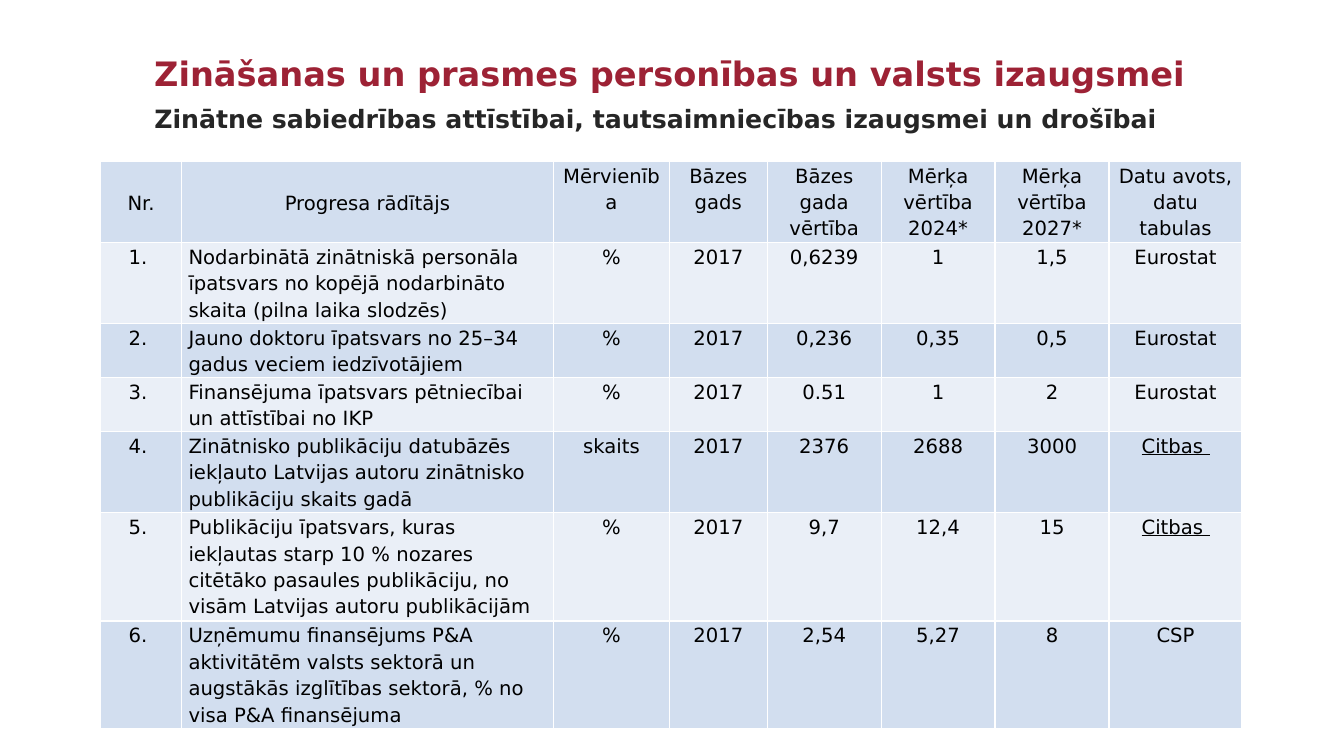
from dataclasses import dataclass

from lxml import etree
from pptx import Presentation
from pptx import util as u
from pptx.dml.color import RGBColor
from pptx.enum import text
from pptx.oxml import ns

HEADINGS = [
    # wording, top, width, height
    ("Zināšanas un prasmes personības un valsts izaugsmei", 0.48, 10.36, 0.5),
    ("Zinātne sabiedrības attīstībai, tautsaimniecības izaugsmei un drošībai", 0.98, 10.12, 0.71),
]
HEADER = ["Nr.", "Progresa rādītājs", "Mērvienība", "Bāzes gads", "Bāzes gada vērtība",
          "Mērķa vērtība 2024*", "Mērķa vērtība 2027*", "Datu avots, datu tabulas"]
CITATION_BASE = "Citbas "
INDICATORS = [
    ("Nodarbinātā zinātniskā personāla īpatsvars no kopējā nodarbināto skaita (pilna laika slodzēs)",
     "%", "2017", "0,6239", "1", "1,5", "Eurostat"),
    ("Jauno doktoru īpatsvars no 25–34 gadus veciem iedzīvotājiem",
     "%", "2017", "0,236", "0,35", "0,5", "Eurostat"),
    ("Finansējuma īpatsvars pētniecībai un attīstībai no IKP",
     "%", "2017", "0.51", "1", "2", "Eurostat"),
    ("Zinātnisko publikāciju datubāzēs iekļauto Latvijas autoru zinātnisko publikāciju skaits gadā",
     "skaits", "2017", "2376", "2688", "3000", CITATION_BASE),
    ("Publikāciju īpatsvars, kuras iekļautas starp 10 % nozares citētāko pasaules publikāciju, "
     "no visām Latvijas autoru publikācijām",
     "%", "2017", "9,7", "12,4", "15", CITATION_BASE),
    ("Uzņēmumu finansējums P&A aktivitātēm valsts sektorā un augstākās izglītības sektorā, "
     "% no visa P&A finansējuma",
     "%", "2017", "2,54", "5,27", "8", "CSP"),
]
COLUMN_WIDTHS = [0.8, 3.69, 1.15, 0.97, 1.13, 1.13, 1.13, 1.32]
ROW_LINES = [3, 3, 2, 2, 3, 4, 3]
LINE_HEIGHT = 0.26
HEADING_LEFT = 1.48
TABLE_LEFT, TABLE_TOP = 1, 1.6


@dataclass(frozen=True)
class Theme:
    font: str = "DejaVu Sans"
    heading_sizes: tuple = (24, 18)
    heading_colors: tuple = ("9D2235", "262626")
    cell_size: int = 14
    cell_color: str = "000000"
    bands: tuple = ("D2DEEF", "EAEFF7")
    border: str = "FFFFFF"


THEME = Theme()


def style(para, size, color, bold=False):
    para.font.name = THEME.font
    para.font.size = u.Pt(size)
    para.font.bold = bold
    para.font.color.rgb = RGBColor.from_string(color)


def add_heading(page, wording, top, width, height, size, color):
    box = page.shapes.add_textbox(*map(u.Inches, (HEADING_LEFT, top, width, height)))
    frame = box.text_frame
    frame.word_wrap = False
    frame.auto_size = text.MSO_AUTO_SIZE.SHAPE_TO_FIT_TEXT
    frame.margin_left = frame.margin_right = u.Inches(0.05)
    frame.margin_top = frame.margin_bottom = u.Inches(0.05)
    frame.text = wording
    style(frame.paragraphs[0], size, color, bold=True)


def add_borders(cell):
    properties = cell._tc.get_or_add_tcPr()
    for position, side in enumerate(("lnL", "lnR", "lnT", "lnB")):
        line = etree.Element(ns.qn(f"a:{side}"), w=str(u.Pt(1)))
        fill = etree.SubElement(line, ns.qn("a:solidFill"))
        etree.SubElement(fill, ns.qn("a:srgbClr"), val=THEME.border)
        properties.insert(position, line)


def fill_cell(cell, wording, band, centred):
    cell.fill.solid()
    cell.fill.fore_color.rgb = RGBColor.from_string(band)
    add_borders(cell)
    cell.margin_left = cell.margin_right = u.Inches(0.07)
    cell.margin_top = cell.margin_bottom = 0
    cell.text = wording
    para = cell.text_frame.paragraphs[0]
    para.alignment = text.PP_ALIGN.CENTER if centred else text.PP_ALIGN.LEFT
    para.line_spacing = 1.15
    style(para, THEME.cell_size, THEME.cell_color)
    if wording == CITATION_BASE:
        para.font.underline = True
        para.runs[0].font.underline = True


def add_indicator_table(page):
    rows = [HEADER] + [(f"{number}. ", *indicator)
                       for number, indicator in enumerate(INDICATORS, 1)]
    table = page.shapes.add_table(
        len(rows), len(HEADER), u.Inches(TABLE_LEFT), u.Inches(TABLE_TOP),
        u.Inches(sum(COLUMN_WIDTHS)), u.Inches(sum(ROW_LINES) * LINE_HEIGHT)).table
    table.first_row = table.horz_banding = False
    for column, width in zip(table.columns, COLUMN_WIDTHS):
        column.width = u.Inches(width)
    for row, lines in zip(table.rows, ROW_LINES):
        row.height = u.Inches(lines * LINE_HEIGHT)
    for r, wordings in enumerate(rows):
        for c, wording in enumerate(wordings):
            fill_cell(table.cell(r, c), wording, THEME.bands[r % 2], centred=r == 0 or c != 1)
    for c in (0, 1):
        table.cell(0, c).vertical_anchor = text.MSO_ANCHOR.MIDDLE


def main():
    deck = Presentation()
    deck.slide_width, deck.slide_height = u.Inches(13.33), u.Inches(7.5)
    page = deck.slides.add_slide(deck.slide_layouts[6])
    for heading, size, color in zip(HEADINGS, THEME.heading_sizes, THEME.heading_colors):
        add_heading(page, *heading, size, color)
    add_indicator_table(page)
    deck.save("out.pptx")


if __name__ == "__main__":
    main()
